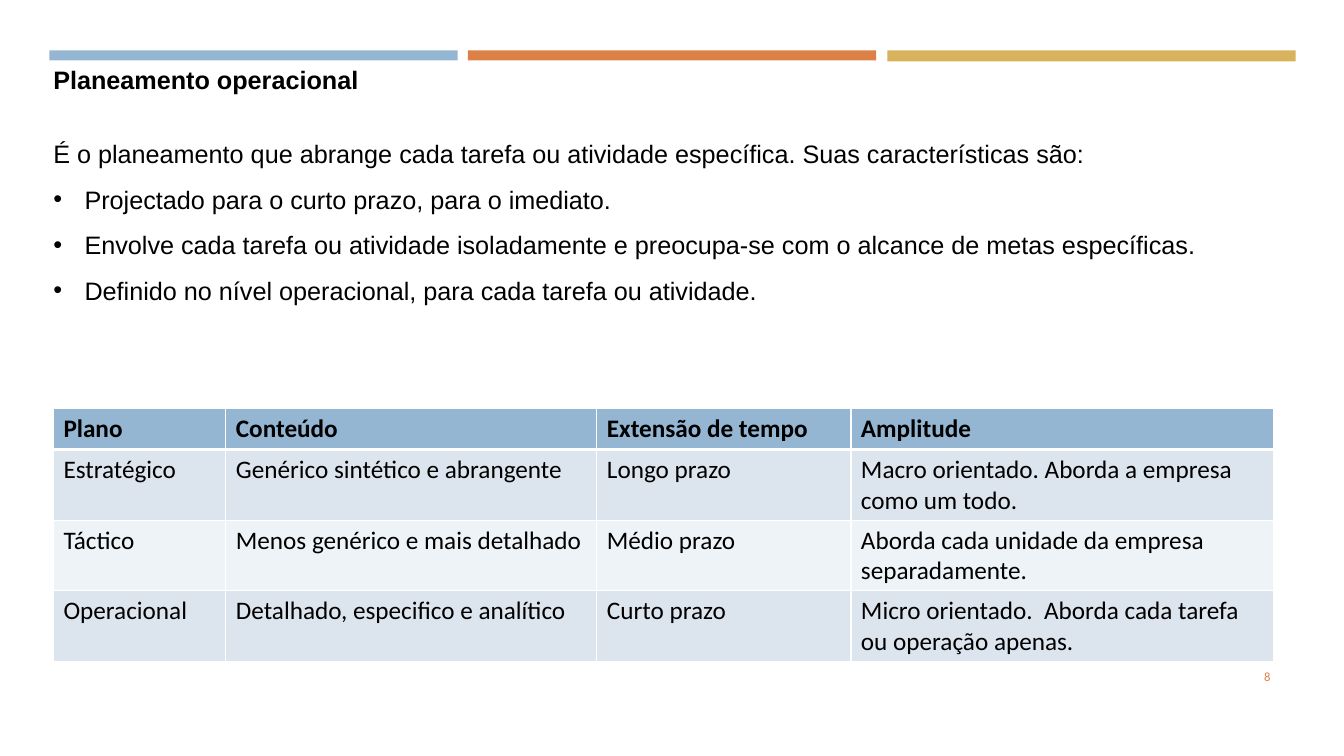
from dataclasses import dataclass
from typing import Any

from lxml.etree import SubElement
from pptx import Presentation
from pptx.dml.color import RGBColor
from pptx.enum.shapes import MSO_SHAPE
from pptx.enum.text import MSO_ANCHOR, PP_ALIGN
from pptx.oxml.ns import qn
from pptx.util import Inches, Pt

HUES = {
    "blue": "94B6D2",
    "orange": "DD8047",
    "gold": "D8B25C",
    "pale": "DCE5EE",
    "light": "EEF3F7",
    "black": "000000",
    "white": "FFFFFF",
}


@dataclass
class Bar:
    left: float
    height: float
    hue: str


@dataclass
class Line:
    text: str
    format: dict[str, Any]
    bold: bool = False
    bullet: bool = False


BARS = [
    Bar(0.49, 0.1, "blue"),
    Bar(4.64, 0.1, "orange"),
    Bar(8.8, 0.11, "gold"),
]

TITLE = {"alignment": PP_ALIGN.JUSTIFY, "space_after": Pt(20.7)}
BODY = {"alignment": PP_ALIGN.JUSTIFY, "line_spacing": 1.5}
LINES = [
    Line("Planeamento operacional", TITLE, bold=True),
    Line("É o planeamento que abrange cada tarefa ou atividade específica. "
         "Suas características são:", BODY),
    Line("Projectado para o curto prazo, para o imediato.", BODY, bullet=True),
    Line("Envolve cada tarefa ou atividade isoladamente e preocupa-se com o "
         "alcance de metas específicas.", BODY, bullet=True),
    Line("Definido no nível operacional, para cada tarefa ou atividade.",
         BODY, bullet=True),
]
PAGE = Line("8", {"alignment": PP_ALIGN.RIGHT})

WIDTHS = [1.71, 3.68, 2.52, 4.19]
HEIGHTS = [0.41, 0.7, 0.7, 0.7]
PLANS = [
    ["Plano", "Conteúdo", "Extensão de tempo", "Amplitude"],
    ["Estratégico", "Genérico sintético e abrangente", "Longo prazo",
     "Macro orientado. Aborda a empresa como um todo."],
    ["Táctico", "Menos genérico e mais detalhado", "Médio prazo",
     "Aborda cada unidade da empresa separadamente."],
    ["Operacional", "Detalhado, especifico e analítico", "Curto prazo",
     "Micro orientado.  Aborda cada tarefa ou operação apenas."],
]
FILLS = ["blue", "pale", "light", "pale"]


def color(name: str) -> RGBColor:
    return RGBColor.from_string(HUES[name])


def apply(target: Any, format: dict[str, Any]) -> None:
    for name, value in format.items():
        setattr(target, name, value)


def style(para: Any, text: str, face: str, size: float, hue: str,
          bold: bool = False) -> None:
    run = para.add_run()
    run.text = text
    apply(run.font, {"name": face, "size": Pt(size), "bold": bold})
    run.font.color.rgb = color(hue)


def draw_bar(slide: Any, bar: Bar) -> None:
    shape = slide.shapes.add_shape(
        MSO_SHAPE.RECTANGLE, Inches(bar.left), Inches(0.5),
        Inches(4.05), Inches(bar.height))
    shape.shadow.inherit = False
    shape.fill.solid()
    shape.fill.fore_color.rgb = color(bar.hue)
    shape.line.fill.background()


def add_mark(para: Any) -> None:
    props = para._p.get_or_add_pPr()
    props.set("marL", str(Inches(0.31)))
    props.set("indent", str(-Inches(0.31)))
    SubElement(props, qn("a:buFont")).set("typeface", "Arial")
    SubElement(props, qn("a:buChar")).set("char", "•")


def draw_text(slide: Any, box: tuple[float, ...], lines: list[Line],
              face: str, size: float, hue: str, anchor: Any) -> None:
    frame = slide.shapes.add_textbox(*map(Inches, box)).text_frame
    apply(frame, {"word_wrap": True, "vertical_anchor": anchor})
    for index, line in enumerate(lines):
        para = frame.add_paragraph() if index else frame.paragraphs[0]
        apply(para, line.format)
        if line.bullet:
            add_mark(para)
        style(para, line.text, face, size, hue, line.bold)


def draw_edge(cell: Any, side: str, width: float) -> None:
    props = cell._tc.get_or_add_tcPr()
    edge = SubElement(props, qn(f"a:ln{side}"), w=str(Pt(width)))
    fill = SubElement(edge, qn("a:solidFill"))
    SubElement(fill, qn("a:srgbClr")).set("val", HUES["white"])


def draw_table(slide: Any) -> None:
    table = slide.shapes.add_table(
        len(PLANS), len(WIDTHS), Inches(0.53), Inches(4.05),
        Inches(sum(WIDTHS)), Inches(sum(HEIGHTS))).table
    for column, width in zip(table.columns, WIDTHS):
        column.width = Inches(width)
    for index, (row, height) in enumerate(zip(table.rows, HEIGHTS)):
        row.height = Inches(height)
        head = index == 0
        edges = {"L": 1, "R": 1, "T": 3 if index == 1 else 1,
                 "B": 3 if head else 1}
        for cell, text in zip(row.cells, PLANS[index]):
            for side, width in edges.items():
                draw_edge(cell, side, width)
            cell.fill.solid()
            cell.fill.fore_color.rgb = color(FILLS[index])
            style(cell.text_frame.paragraphs[0], text, "Calibri", 18,
                  "black", head)


def main() -> None:
    deck = Presentation()
    apply(deck, {"slide_width": Inches(13.33), "slide_height": Inches(7.5)})
    slide = deck.slides.add_slide(deck.slide_layouts[6])
    for bar in BARS:
        draw_bar(slide, bar)
    draw_text(slide, (11.55, 6.51, 1.15, 0.4), [PAGE],
              "Calibri", 9, "orange", MSO_ANCHOR.MIDDLE)
    draw_text(slide, (0.43, 0.59, 12.31, 2.47), LINES,
              "Arial", 18, "black", MSO_ANCHOR.TOP)
    draw_table(slide)
    deck.save("out.pptx")


if __name__ == "__main__":
    main()
